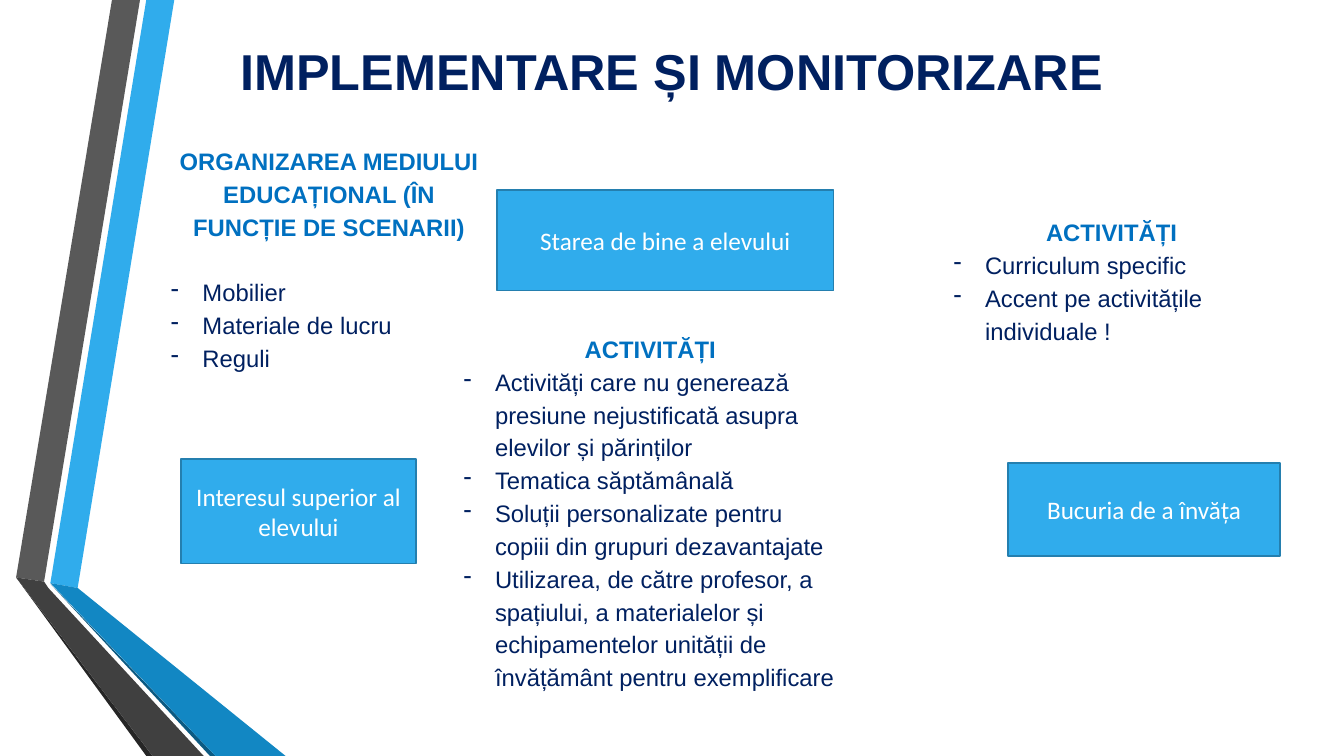
"""Build the slide on implementing and monitoring school activities."""
from lxml import etree
from pptx import Presentation
from pptx import util as u
from pptx.dml.color import RGBColor
from pptx.enum import shapes, text
from pptx.oxml import ns

NAVY = RGBColor(0x00, 0x20, 0x60)
BLUE = RGBColor(0x00, 0x70, 0xC0)
SKY = RGBColor(0x30, 0xAC, 0xEC)
SKY_EDGE = RGBColor(0x24, 0x7F, 0xAF)
SKY_DARK = RGBColor(0x12, 0x87, 0xC3)
SKY_DEEP = RGBColor(0x0C, 0x5A, 0x82)
GREY = RGBColor(0x59, 0x59, 0x59)
GREY_DARK = RGBColor(0x40, 0x40, 0x40)
GREY_DEEP = RGBColor(0x26, 0x26, 0x26)
WHITE = RGBColor(0xFF, 0xFF, 0xFF)

WIDTH, HEIGHT = 960, 540
INDENT = 22.5
TITLE = "IMPLEMENTARE ȘI MONITORIZARE"
TITLE_AREA = (46, 27, 868, 46)

RIBBONS = [
    (SKY, [(36, 416.5), (55.5, 420), (124.5, 0), (104.5, 0)]),
    (GREY, [(100, 0), (80, 0), (11.5, 412.5), (31.5, 415.5)]),
    (GREY_DEEP, [(11.5, 412.5), (104.5, HEIGHT), (109, HEIGHT)]),
    (SKY_DEEP, [(36, 417), (150, HEIGHT), (154, HEIGHT)]),
    (SKY_DARK, [(36, 416.5), (154, HEIGHT), (204, HEIGHT), (55.5, 420)]),
    (GREY_DARK, [(145.5, HEIGHT), (34.5, 420), (31.5, 415.5),
                 (11.5, 412.5), (109, HEIGHT)]),
]

LISTS = [
    ((115, 98.5, 240, 196.5), "ORGANIZAREA MEDIULUI EDUCAȚIONAL (ÎN FUNCȚIE DE SCENARII)", 23,
     ["Mobilier", "Materiale de lucru", "Reguli"]),
    ((674, 149, 240, 102), "ACTIVITĂȚI", 0,
     ["Curriculum specific", "Accent pe activitățile individuale !"]),
    ((324, 232.5, 281, 291.5), "ACTIVITĂȚI", 0,
     ["Activități care nu generează presiune nejustificată asupra elevilor și părinților",
      "Tematica săptămânală",
      "Soluții personalizate pentru copiii din grupuri dezavantajate",
      "Utilizarea, de către profesor, a spațiului, a materialelor și echipamentelor "
      "unității de învățământ pentru exemplificare"]),
]

GOALS = [
    ((355, 135.5, 240.5, 72), "Starea de bine a elevului"),
    ((129.5, 328, 167.5, 74.5), "Interesul superior al elevului"),
    ((720, 331, 194.5, 66), "Bucuria de a învăța"),
]


def points(area):
    return [u.Pt(length) for length in area]


def style(para, words, font, size, color, bold=False, align=text.PP_ALIGN.CENTER):
    para.text = words
    para.alignment = align
    para.font.name = font
    para.font.size = u.Pt(size)
    para.font.bold = bold
    para.font.color.rgb = color


def add_dash(para):
    props = para._p.get_or_add_pPr()
    props.set("marL", str(u.Pt(INDENT)))
    props.set("indent", str(-u.Pt(INDENT)))
    etree.SubElement(props, ns.qn("a:buChar")).set("char", "-")


def add_ribbon(page, color, corners):
    builder = page.shapes.build_freeform(*points(corners[0]), scale=1.0)
    builder.add_line_segments([points(corner) for corner in corners[1:]], close=True)
    ribbon = builder.convert_to_shape()
    ribbon.shadow.inherit = False
    ribbon.fill.solid()
    ribbon.fill.fore_color.rgb = color
    ribbon.line.fill.background()


def add_title(page):
    frame = page.shapes.add_textbox(*points(TITLE_AREA)).text_frame
    frame.word_wrap = True
    frame.vertical_anchor = text.MSO_ANCHOR.MIDDLE
    style(frame.paragraphs[0], TITLE, "Arial", 36, NAVY, bold=True)


def add_list(page, area, heading, gap, items):
    frame = page.shapes.add_textbox(*points(area)).text_frame
    frame.word_wrap = True
    para = frame.paragraphs[0]
    style(para, heading, "Arial", 17, BLUE, bold=True)
    para.space_after = u.Pt(gap)
    for item in items:
        para = frame.add_paragraph()
        add_dash(para)
        style(para, item, "Arial", 17, NAVY, align=text.PP_ALIGN.LEFT)
    for para in frame.paragraphs:
        para.line_spacing = 1.15


def add_goal(page, area, words):
    box = page.shapes.add_shape(shapes.MSO_SHAPE.RECTANGLE, *points(area))
    box.shadow.inherit = False
    box.fill.solid()
    box.fill.fore_color.rgb = SKY
    box.line.color.rgb = SKY_EDGE
    box.line.width = u.Pt(1.25)
    box.text_frame.word_wrap = True
    box.text_frame.vertical_anchor = text.MSO_ANCHOR.MIDDLE
    style(box.text_frame.paragraphs[0], words, "Calibri", 18, WHITE)


def main():
    deck = Presentation()
    deck.slide_width, deck.slide_height = points((WIDTH, HEIGHT))
    page = deck.slides.add_slide(deck.slide_layouts[6])
    for ribbon in RIBBONS:
        add_ribbon(page, *ribbon)
    add_title(page)
    for entry in LISTS:
        add_list(page, *entry)
    for goal in GOALS:
        add_goal(page, *goal)
    deck.save("out.pptx")


if __name__ == "__main__":
    main()
